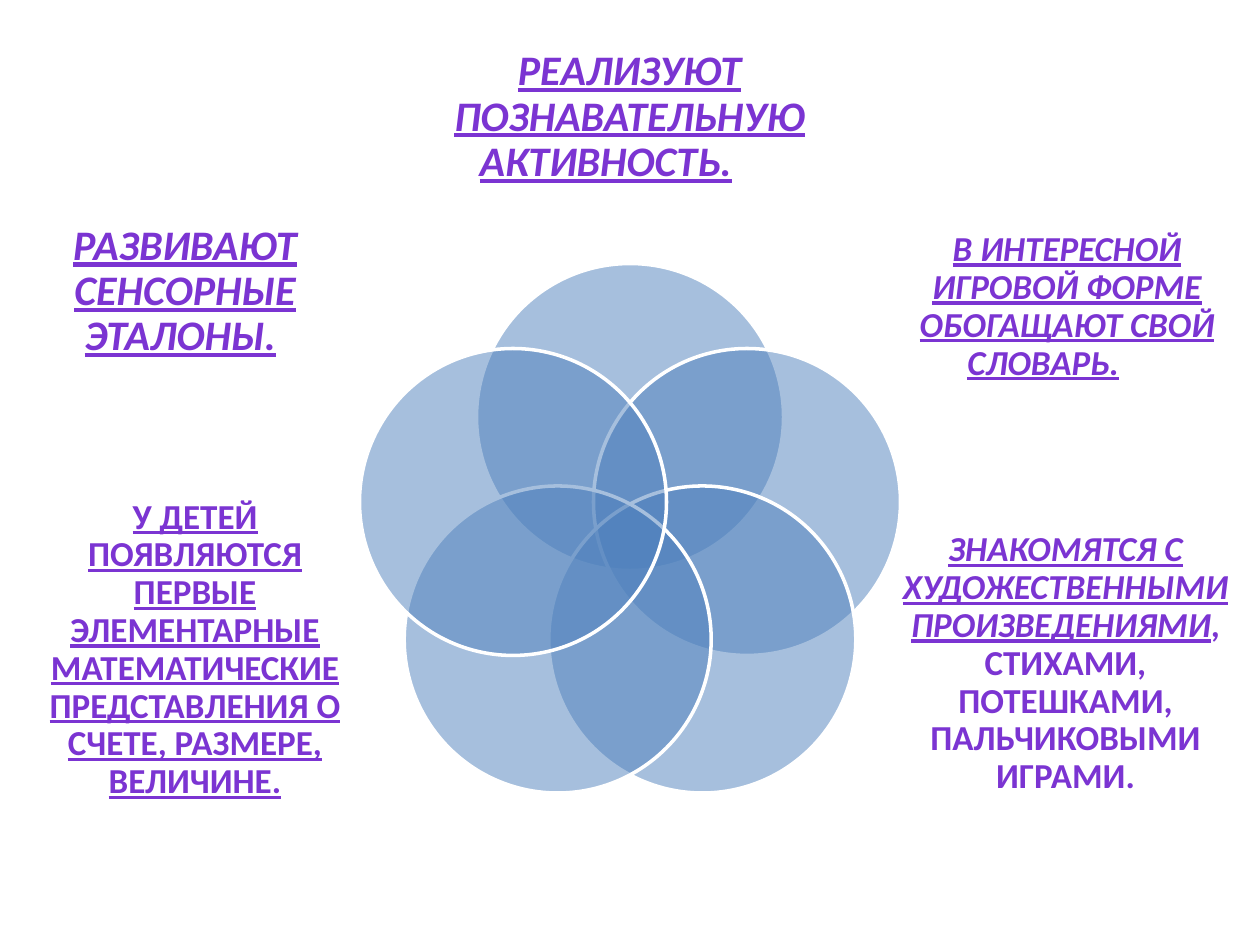
from dataclasses import dataclass
from math import cos, pi, sin

from lxml.etree import SubElement
from pptx import Presentation
from pptx.dml.color import RGBColor as Rgb
from pptx.enum.shapes import MSO_SHAPE as Kind
from pptx.enum.text import MSO_ANCHOR as Anchor, PP_ALIGN as Align
from pptx.oxml.ns import qn
from pptx.slide import Slide
from pptx.util import Emu, Pt

DPI = 126
COLORS = {"petal": "4F81BD", "rim": "FFFFFF", "text": "7B34D2"}
FONT = "Calibri"
MID_X, MID_Y = 630, 540  # centre of the ring
RING = 123  # from the centre to each petal's centre
SIZE = 307  # petal diameter
NBSP = chr(160)


@dataclass
class Petal:
    box: tuple[int, int, int, int]  # label: left, top, width, height
    size: int
    lead: str  # underlined words
    tail: str = ""
    slant: bool = True


# Clockwise from the top
PETALS = [
    Petal((451, 14, 357, 207), 24, "РЕАЛИЗУЮТ ПОЗНАВАТЕЛЬНУЮ АКТИВНОСТЬ.",
          NBSP * 3 + " " + NBSP),
    Petal((907, 195, 320, 224), 20,
          "В ИНТЕРЕСНОЙ ИГРОВОЙ ФОРМЕ ОБОГАЩАЮТ СВОЙ СЛОВАРЬ.", NBSP * 6),
    Petal((898, 552, 335, 224), 20,
          "ЗНАКОМЯТСЯ С ХУДОЖЕСТВЕННЫМИ ПРОИЗВЕДЕНИЯМИ",
          ", СТИХАМИ, ПОТЕШКАМИ, ПАЛЬЧИКОВЫМИ ИГРАМИ."),
    Petal((35, 508, 320, 284), 20,
          "У ДЕТЕЙ ПОЯВЛЯЮТСЯ ПЕРВЫЕ ЭЛЕМЕНТАРНЫЕ МАТЕМАТИЧЕСКИЕ "
          "ПРЕДСТАВЛЕНИЯ О СЧЕТЕ, РАЗМЕРЕ, ВЕЛИЧИНЕ.", slant=False),
    Petal((25, 180, 320, 224), 24, "РАЗВИВАЮТ СЕНСОРНЫЕ ЭТАЛОНЫ.", NBSP),
]


def px(value: float) -> Emu:
    return Emu(round(value * 914400 / DPI))


def color(name: str) -> Rgb:
    return Rgb.from_string(COLORS[name])


def add_disc(slide: Slide, index: int) -> None:
    """Draw one half-transparent circle of the ring."""
    turn = 2 * pi * index / len(PETALS)
    left = MID_X + RING * sin(turn) - SIZE / 2
    top = MID_Y - RING * cos(turn) - SIZE / 2
    disc = slide.shapes.add_shape(Kind.OVAL, px(left), px(top), px(SIZE), px(SIZE))
    disc.shadow.inherit = False
    disc.fill.solid()
    disc.fill.fore_color.rgb = color("petal")
    tint = disc.fill._xPr.find(qn("a:solidFill"))[0]
    SubElement(tint, qn("a:alpha"), val="50000")
    disc.line.color.rgb = color("rim")
    disc.line.width = Pt(2)


def add_label(slide: Slide, petal: Petal) -> None:
    """Write the words that belong to one circle."""
    frame = slide.shapes.add_textbox(*map(px, petal.box)).text_frame
    frame.word_wrap = True
    frame.vertical_anchor = Anchor.MIDDLE
    frame.margin_left = frame.margin_right = 0
    frame.margin_top = frame.margin_bottom = 0
    para = frame.paragraphs[0]
    para.alignment = Align.CENTER
    para.line_spacing = 0.9
    for text, lined in ((petal.lead, True), (petal.tail, False)):
        if not text:
            continue
        run = para.add_run()
        run.text = text
        font = run.font
        font.name, font.size, font.bold = FONT, Pt(petal.size), True
        font.italic = lined and petal.slant
        font.underline = lined
        font.color.rgb = color("text")


def main() -> None:
    deck = Presentation()
    deck.slide_width, deck.slide_height = px(1260), px(945)
    slide = deck.slides.add_slide(deck.slide_layouts[6])
    # Ring of circles, each with its label
    for index, petal in enumerate(PETALS):
        add_disc(slide, index)
        add_label(slide, petal)
    deck.save("out.pptx")


if __name__ == "__main__":
    main()
